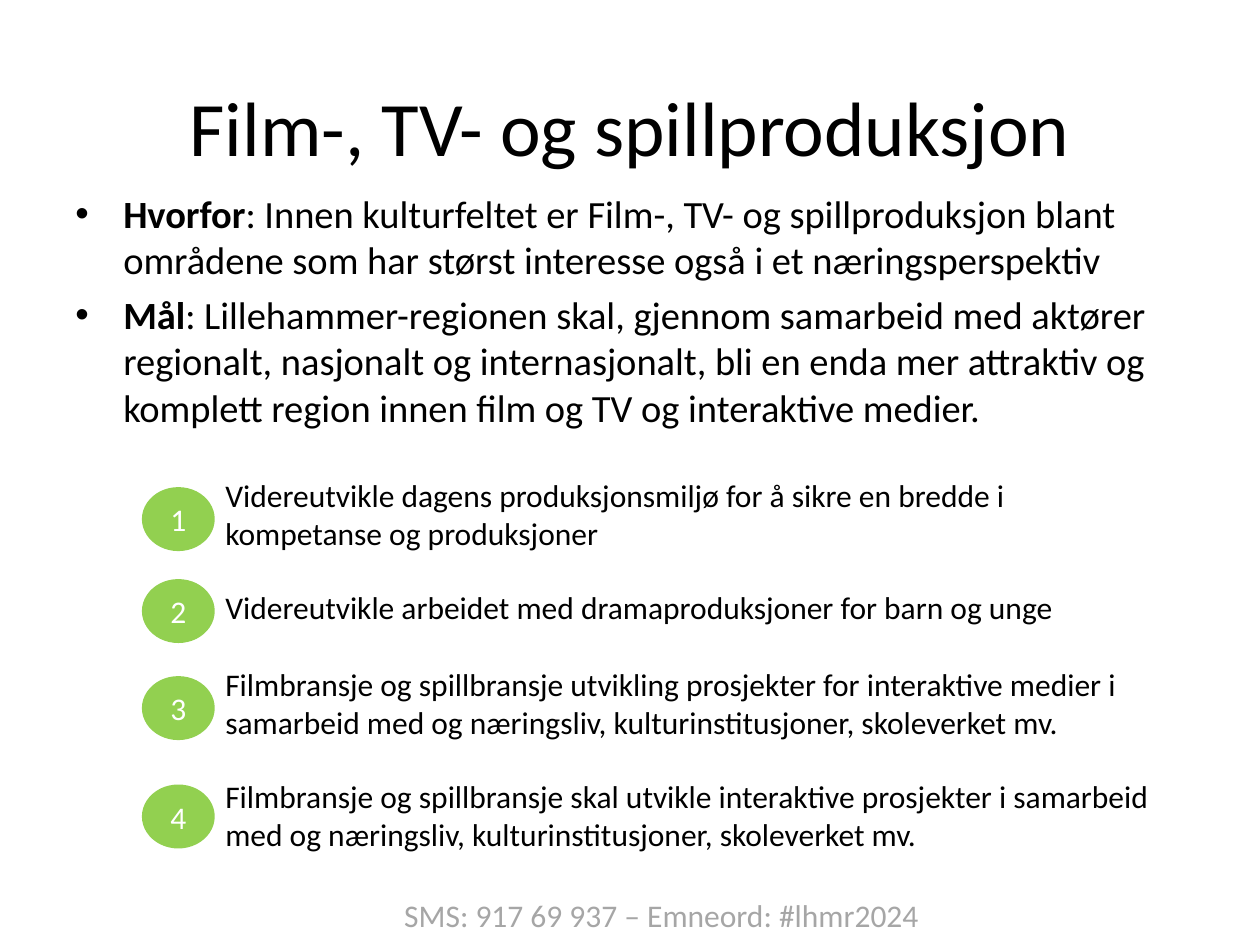
from lxml import etree
from pptx import Presentation
from pptx.dml.color import RGBColor
from pptx.enum.shapes import MSO_SHAPE
from pptx.enum.text import MSO_ANCHOR, PP_ALIGN
from pptx.oxml.ns import qn
from pptx.util import Inches, Pt

OVAL = MSO_SHAPE.OVAL
MIDDLE, TOP = MSO_ANCHOR.MIDDLE, MSO_ANCHOR.TOP
LEFT, CENTER = PP_ALIGN.LEFT, PP_ALIGN.CENTER
TITLE_ONLY = 5

BLACK, WHITE, GREEN, GREY = "000000", "FFFFFF", "92D050", "A6A6A6"
FONT = "Calibri"

GOALS = [
    ("Hvorfor", ": Innen kulturfeltet er Film-, TV- og spillproduksjon blant "
     "områdene som har størst interesse også i et næringsperspektiv"),
    ("Mål", ": Lillehammer-regionen skal, gjennom samarbeid med aktører "
     "regionalt, nasjonalt og internasjonalt, bli en enda mer attraktiv og "
     "komplett region innen film og TV og interaktive medier."),
]

# Marker top, text top, text width, text height, wording
MEASURES = [
    (3.88, 3.73, 7.48, 0.71,
     "Videreutvikle dagens produksjonsmiljø for å sikre en bredde i "
     "kompetanse og produksjoner"),
    (4.61, 4.62, 7.87, 0.4,
     "Videreutvikle arbeidet med dramaproduksjoner for barn og unge"),
    (5.38, 5.23, 7.87, 0.71,
     "Filmbransje og spillbransje utvikling prosjekter for interaktive medier "
     "i samarbeid med og næringsliv, kulturinstitusjoner, skoleverket mv."),
    (6.24, 6.12, 7.87, 0.71,
     "Filmbransje og spillbransje skal utvikle interaktive prosjekter i "
     "samarbeid med og næringsliv, kulturinstitusjoner, skoleverket mv."),
]


def rgb(value):
    return RGBColor.from_string(value)


def add_text(paragraph, text, size=18, color=BLACK, bold=False, align=LEFT):
    paragraph.alignment = align
    run = paragraph.add_run()
    run.text = text
    run.font.name = FONT
    run.font.size = Pt(size)
    run.font.bold = bold
    run.font.color.rgb = rgb(color)


def add_box(slide, left, top, width, height):
    box = slide.shapes.add_textbox(
        Inches(left), Inches(top), Inches(width), Inches(height))
    frame = box.text_frame
    frame.word_wrap = True
    frame.vertical_anchor = TOP
    return frame


def add_title(slide, text):
    title = slide.shapes.title
    title.left, title.top = Inches(0.5), Inches(0.37)
    title.width, title.height = Inches(9), Inches(1.25)
    title.text_frame.vertical_anchor = MIDDLE
    add_text(title.text_frame.paragraphs[0], text, size=44, align=CENTER)


def set_bullet(paragraph, indent=0.38):
    properties = paragraph._p.get_or_add_pPr()
    properties.set("marL", str(Inches(indent)))
    properties.set("indent", str(-Inches(indent)))
    etree.SubElement(properties, qn("a:buFont"), typeface="Arial")
    etree.SubElement(properties, qn("a:buChar"), char="•")


def add_goals(slide):
    frame = add_box(slide, 0.5, 1.46, 9.15, 2.16)
    for index, (label, description) in enumerate(GOALS):
        paragraph = frame.add_paragraph() if index else frame.paragraphs[0]
        paragraph.space_before = Pt(5)
        set_bullet(paragraph)
        add_text(paragraph, label, size=22, bold=True)
        add_text(paragraph, description, size=22)


def add_marker(slide, number, top):
    marker = slide.shapes.add_shape(
        OVAL, Inches(1.14), Inches(top), Inches(0.55), Inches(0.48))
    marker.shadow.inherit = False
    marker.fill.solid()
    marker.fill.fore_color.rgb = rgb(GREEN)
    marker.line.color.rgb = rgb(GREEN)
    marker.line.width = Pt(2)
    marker.text_frame.vertical_anchor = MIDDLE
    add_text(marker.text_frame.paragraphs[0], str(number), color=WHITE,
             align=CENTER)


def main():
    deck = Presentation()
    deck.slide_width, deck.slide_height = Inches(10), Inches(7.5)
    slide = deck.slides.add_slide(deck.slide_layouts[TITLE_ONLY])

    # Heading, reason and aim
    add_title(slide, "Film-, TV- og spillproduksjon")
    add_goals(slide)

    # Numbered measures
    for number, measure in enumerate(MEASURES, start=1):
        marker_top, text_top, width, height, wording = measure
        add_marker(slide, number, marker_top)
        frame = add_box(slide, 1.69, text_top, width, height)
        add_text(frame.paragraphs[0], wording)

    # Contact line
    contact = add_box(slide, 3.11, 7.06, 4.41, 0.4)
    add_text(contact.paragraphs[0], "SMS: 917 69 937 – Emneord: #lhmr2024",
             color=GREY)

    deck.save("out.pptx")


if __name__ == "__main__":
    main()
